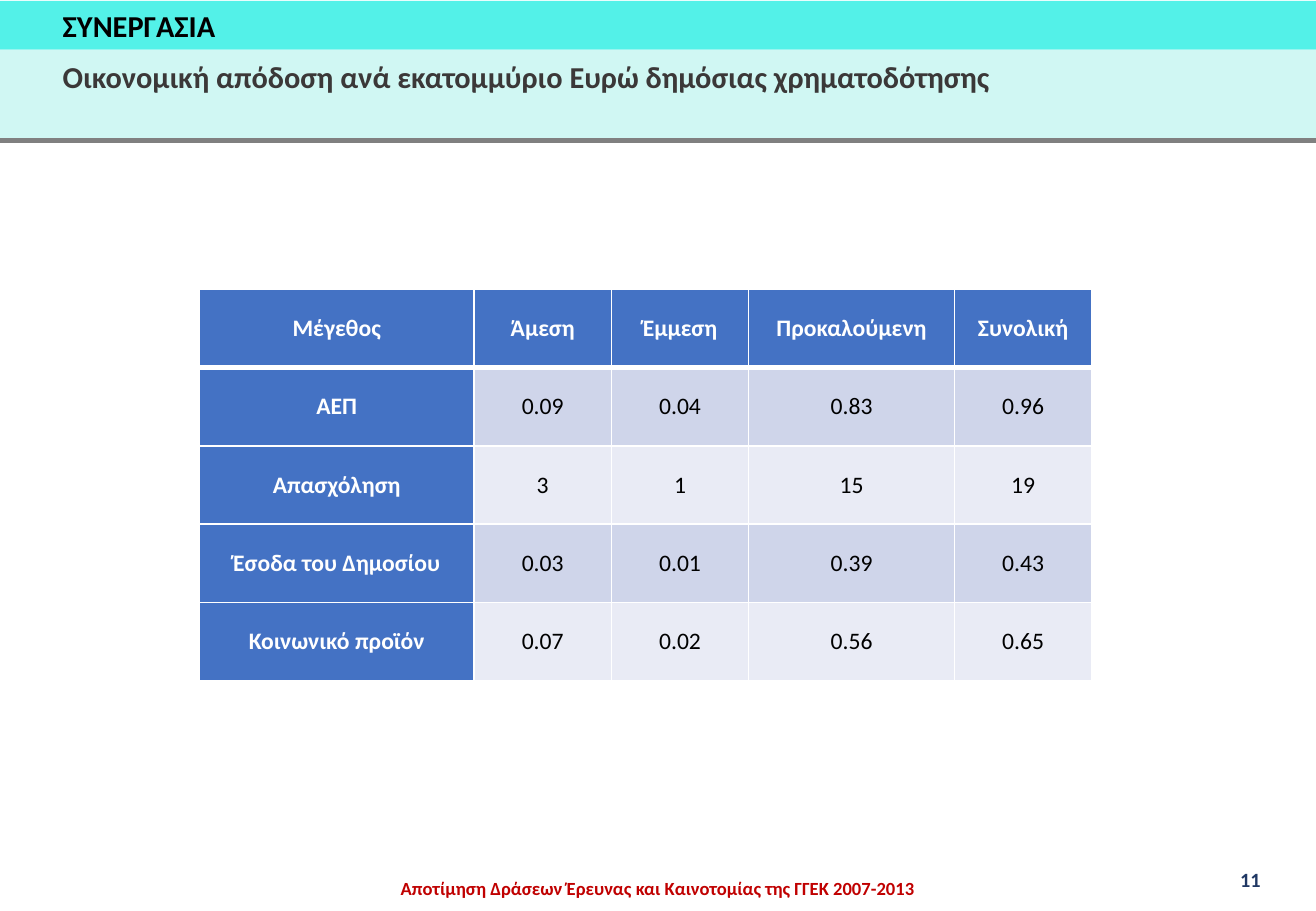
from lxml import etree
from pptx import Presentation
from pptx.dml.color import RGBColor
from pptx.enum import shapes as es, text as et
from pptx.oxml import ns
from pptx.util import Pt

WHITE = RGBColor(0xFF, 0xFF, 0xFF)
BLACK = RGBColor(0, 0, 0)
AQUA = RGBColor(0x53, 0xF1, 0xE8)
PALE = RGBColor(0xD0, 0xF7, 0xF3)
GREY = RGBColor(0x80, 0x80, 0x80)
DARK = RGBColor(0x3B, 0x38, 0x38)
RED = RGBColor(0xC0, 0, 0)
NAVY = RGBColor(0x20, 0x38, 0x64)
BLUE = RGBColor(0x44, 0x72, 0xC4)
BANDS = RGBColor(0xCF, 0xD5, 0xEA), RGBColor(0xE9, 0xEB, 0xF5)

WIDE, HIGH = 780, 540
COLS = 162.8, 81.4, 81.4, 122, 81.4
ROW = 46.4
DATA = [
    ("Μέγεθος", "Άμεση", "Έμμεση", "Προκαλούμενη", "Συνολική"),
    ("ΑΕΠ", "0.09", "0.04", "0.83", "0.96"),
    ("Απασχόληση", "3", "1", "15", "19"),
    ("Έσοδα του Δημοσίου", "0.03", "0.01", "0.39", "0.43"),
    ("Κοινωνικό προϊόν", "0.07", "0.02", "0.56", "0.65"),
]


def assign(obj, **vals):
    for key, val in vals.items():
        setattr(obj, key, val)


def write(frame, words, size, color, bold=True, **para):
    """Fill a text frame with one paragraph, formatted by the given values."""
    frame.text = words
    line = frame.paragraphs[0]
    assign(line, **para)
    assign(line.font, name="Calibri", size=Pt(size), bold=bold)
    line.font.color.rgb = color


def add_text(slide, box, words, size, color, pad=(7.2, 3.6), **para):
    frame = slide.shapes.add_textbox(*map(Pt, box)).text_frame
    side, edge = map(Pt, pad)
    assign(frame, word_wrap=True, margin_left=side, margin_right=side,
           margin_top=edge, margin_bottom=edge)
    write(frame, words, size, color, **para)


def add_band(slide, box, color):
    band = slide.shapes.add_shape(es.MSO_SHAPE.RECTANGLE, *map(Pt, box))
    band.shadow.inherit = False
    band.fill.solid()
    band.fill.fore_color.rgb = color
    band.line.fill.background()


def add_head(slide, box):
    left, top, width, height = box
    split = 29
    add_band(slide, (left, top, width, split), AQUA)
    add_band(slide, (left, top + split, width, height - split), PALE)

    base = Pt(top + height)
    rule = slide.shapes.add_connector(
        es.MSO_CONNECTOR.STRAIGHT, Pt(left), base, Pt(left + width), base)
    rule.line.color.rgb = GREY
    rule.line.width = Pt(3)
    etree.SubElement(rule._element.spPr, ns.qn("a:effectLst"))

    title = slide.shapes.title
    assign(title, left=Pt(left + 30), top=Pt(top), width=Pt(677), height=Pt(split))
    assign(title.text_frame, word_wrap=True, auto_size=et.MSO_AUTO_SIZE.NONE,
           vertical_anchor=et.MSO_ANCHOR.TOP)
    write(title.text_frame, "ΣΥΝΕΡΓΑΣΙΑ", 18, BLACK, alignment=et.PP_ALIGN.LEFT)
    title.element.getparent().append(title.element)  # in front of the bands

    add_text(slide, (left + 30, top + split + 1.5, 677, split),
             "Οικονομική απόδοση ανά εκατομμύριο Ευρώ δημόσιας χρηματοδότησης",
             18, DARK)


def set_edges(cell, row):
    """Draw white cell borders, thick between the header and the first row."""
    widths = {"L": 1, "R": 1, "T": 3 if row == 1 else 1, "B": 3 if row == 0 else 1}
    props = cell._tc.get_or_add_tcPr()
    for side, width in widths.items():
        edge = etree.SubElement(props, ns.qn("a:ln" + side), w=str(Pt(width)))
        fill = etree.SubElement(edge, ns.qn("a:solidFill"))
        etree.SubElement(fill, ns.qn("a:srgbClr"), val=str(WHITE))


def add_yields(slide, box):
    table = slide.shapes.add_table(len(DATA), len(COLS), *map(Pt, box)).table
    for col, width in zip(table.columns, COLS):
        col.width = Pt(width)
    for r, items in enumerate(DATA):
        table.rows[r].height = Pt(ROW)
        for c, words in enumerate(items):
            label = r == 0 or c == 0
            cell = table.cell(r, c)
            set_edges(cell, r)
            cell.fill.solid()
            cell.fill.fore_color.rgb = BLUE if label else BANDS[(r - 1) % 2]
            assign(cell, vertical_anchor=et.MSO_ANCHOR.MIDDLE, margin_left=Pt(4.3),
                   margin_right=Pt(4.3), margin_top=0, margin_bottom=0)
            write(cell.text_frame, words, 14, WHITE if label else BLACK, label,
                  alignment=et.PP_ALIGN.CENTER, space_after=Pt(2))


def add_foot(slide, box):
    left, top, width, height = box
    add_text(slide, (left + 203, top, 374, height),
             "Aποτίμηση Δράσεων Έρευνας και Καινοτομίας της ΓΓΕΚ 2007-2013",
             11, RED, pad=(0, 0), alignment=et.PP_ALIGN.CENTER,
             line_spacing=Pt(25.3))
    add_text(slide, (left + width - 52, top + 3, 37.5, 21.6), "11", 12, NAVY)


def main():
    deck = Presentation()
    assign(deck, slide_width=Pt(WIDE), slide_height=Pt(HIGH))
    slide = deck.slides.add_slide(deck.slide_layouts[5])
    add_head(slide, (0, 0.5, WIDE, 83))
    add_yields(slide, (118.2, 171.5, sum(COLS), ROW * len(DATA)))
    add_foot(slide, (0, 507.5, WIDE, 27.5))
    deck.save("out.pptx")


if __name__ == "__main__":
    main()
